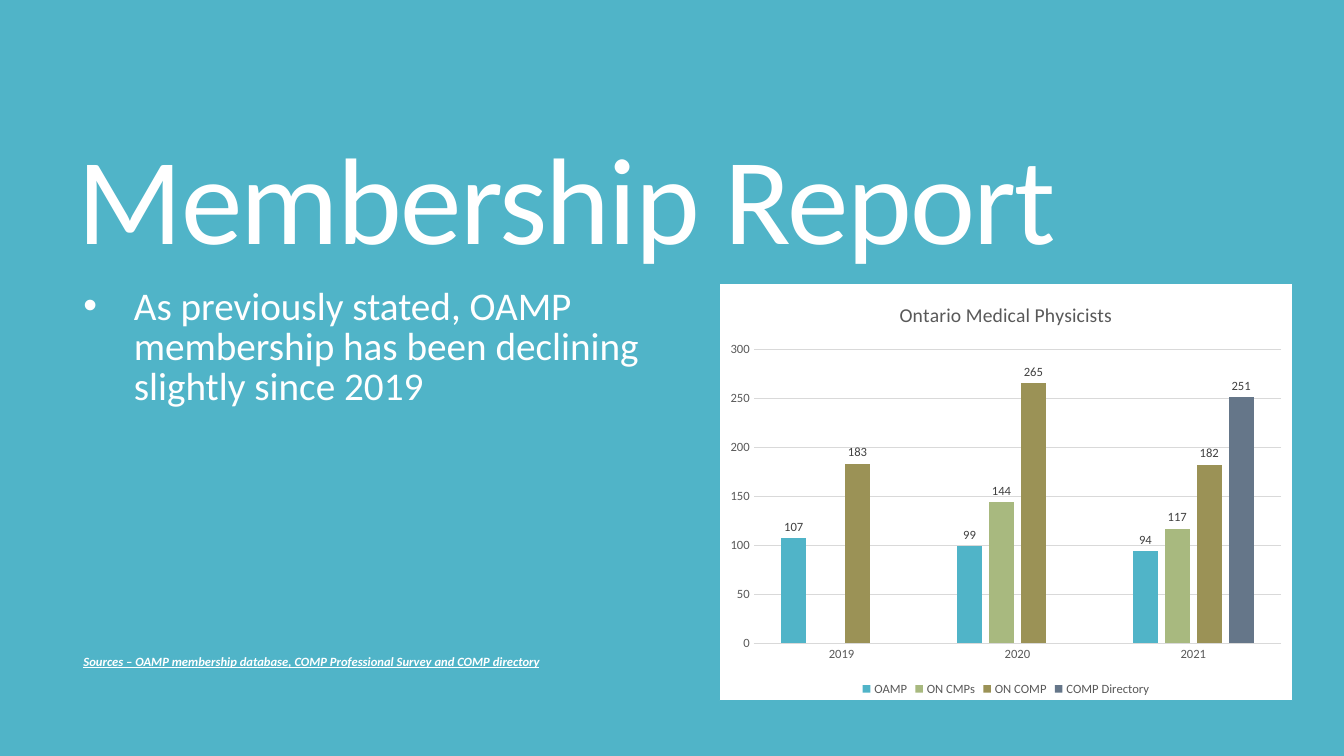
from lxml import etree
from pptx import Presentation
from pptx.chart.data import CategoryChartData
from pptx.dml.color import RGBColor
from pptx.enum.chart import XL_CHART_TYPE as ChartType, XL_LABEL_POSITION as LabelPos
from pptx.enum.chart import XL_LEGEND_POSITION as LegendPos, XL_TICK_MARK as Tick
from pptx.enum.text import MSO_ANCHOR as Anchor, MSO_AUTO_SIZE as AutoSize, PP_ALIGN as Align
from pptx.oxml import parse_xml
from pptx.oxml.ns import nsdecls, qn
from pptx.util import Cm, Pt

FONT = "Calibri"
COLORS = {
    "teal": "50B4C8", "white": "FFFFFF", "sage": "A8B97F", "olive": "9B9256",
    "slate": "657689", "grid": "D9D9D9", "axis": "595959", "label": "404040",
}
TITLE = "Membership Report"
BULLET = "As previously stated, OAMP membership has been declining slightly since 2019"
SOURCES = "Sources – OAMP membership database, COMP Professional Survey and COMP directory"
CHART_TITLE = "Ontario Medical Physicists"
YEARS = ["2019", "2020", "2021"]
SERIES = [
    ("OAMP", "teal", (107, 99, 94)),
    ("ON CMPs", "sage", (None, 144, 117)),
    ("ON COMP", "olive", (183, 265, 182)),
    ("COMP Directory", "slate", (None, None, 251)),
]
TITLE_BOX = (Cm(1.7), Cm(0.97), Cm(29.95), Cm(5.92))
ROW_TOP, ROW_HEIGHT = Cm(7.14), Cm(10.52)
BODY_BOX = (Cm(1.85), ROW_TOP, Cm(15.09), ROW_HEIGHT)
CHART_BOX = (Cm(18.11), ROW_TOP, Cm(14.48), ROW_HEIGHT)
INDENT = Cm(1.27)


def rgb(name):
    return RGBColor.from_string(COLORS[name])


def set_font(font, size, color):
    font.name, font.size = FONT, Pt(size)
    font.color.rgb = rgb(color)


def place(sp, box, anchor):
    sp.left, sp.top, sp.width, sp.height = box
    tf = sp.text_frame
    tf.word_wrap = True
    tf.auto_size = AutoSize.NONE
    tf.vertical_anchor = anchor
    return tf


def format_paragraph(p, size, spacing, before):
    p.alignment = Align.LEFT
    p.line_spacing = spacing
    p.space_before = Pt(before)
    set_font(p.runs[0].font, size, "white")


def style_axis(axis):
    axis.major_tick_mark = axis.minor_tick_mark = Tick.NONE
    set_font(axis.tick_labels.font, 9, "axis")


def style_line(line):
    line.color.rgb = rgb("grid")
    line.width = Pt(0.75)


prs = Presentation()
prs.slide_width, prs.slide_height = Cm(33.87), Cm(19.05)
s = prs.slides.add_slide(prs.slide_layouts[0])
s.background.fill.solid()
s.background.fill.fore_color.rgb = rgb("teal")

tf = place(s.shapes.title, TITLE_BOX, Anchor.BOTTOM)
tf.text = TITLE
p = tf.paragraphs[0]
format_paragraph(p, 88, 0.8, 0)
p.runs[0].font._element.set("spc", "-120")

tf = place(s.placeholders[1], BODY_BOX, Anchor.TOP)
tf.text = BULLET
p = tf.paragraphs[0]
format_paragraph(p, 28, 0.85, 13)
pPr = p._p.get_or_add_pPr()
pPr.set("marL", str(INDENT))
pPr.set("indent", str(-INDENT))
etree.SubElement(pPr, qn("a:buFont")).set("typeface", "Arial")
etree.SubElement(pPr, qn("a:buChar")).set("char", "•")

p = tf.add_paragraph()
p.text = SOURCES
format_paragraph(p, 9, 0.85, 177)
font = p.runs[0].font
font.bold = font.italic = font.underline = True

data = CategoryChartData()
data.categories = YEARS
for name, _, values in SERIES:
    data.add_series(name, values)
chart = s.shapes.add_chart(ChartType.COLUMN_CLUSTERED, *CHART_BOX, data).chart
chart.font.name, chart.font.size = FONT, Pt(10)
chart.has_title = True
chart.chart_title.include_in_layout = False
tf = chart.chart_title.text_frame
tf.text = CHART_TITLE
r = tf.paragraphs[0].runs[0]
set_font(r.font, 14, "axis")
r.font.bold = False

chart.has_legend = True
chart.legend.position = LegendPos.BOTTOM
chart.legend.include_in_layout = False
set_font(chart.legend.font, 9, "axis")

style_axis(chart.category_axis)
style_line(chart.category_axis.format.line)
axis = chart.value_axis
style_axis(axis)
axis.minimum_scale, axis.maximum_scale, axis.major_unit = 0, 300, 50
axis.format.line.fill.background()
style_line(axis.major_gridlines.format.line)

plot = chart.plots[0]
plot.vary_by_categories = False
plot.gap_width, plot.overlap = 219, -27
for series, (_, color, _) in zip(plot.series, SERIES):
    series.format.fill.solid()
    series.format.fill.fore_color.rgb = rgb(color)
    labels = series.data_labels
    labels.show_value = True
    labels.position = LabelPos.OUTSIDE_END
    set_font(labels.font, 9, "label")

chart_area = parse_xml(
    f'<c:spPr {nsdecls("c", "a")}>'
    f'<a:solidFill><a:srgbClr val="{COLORS["white"]}"/></a:solidFill>'
    f'<a:ln w="{Pt(0.75)}"><a:solidFill><a:srgbClr val="{COLORS["teal"]}"/></a:solidFill></a:ln>'
    '</c:spPr>'
)
chart._chartSpace.find(qn("c:txPr")).addprevious(chart_area)

prs.save("out.pptx")
